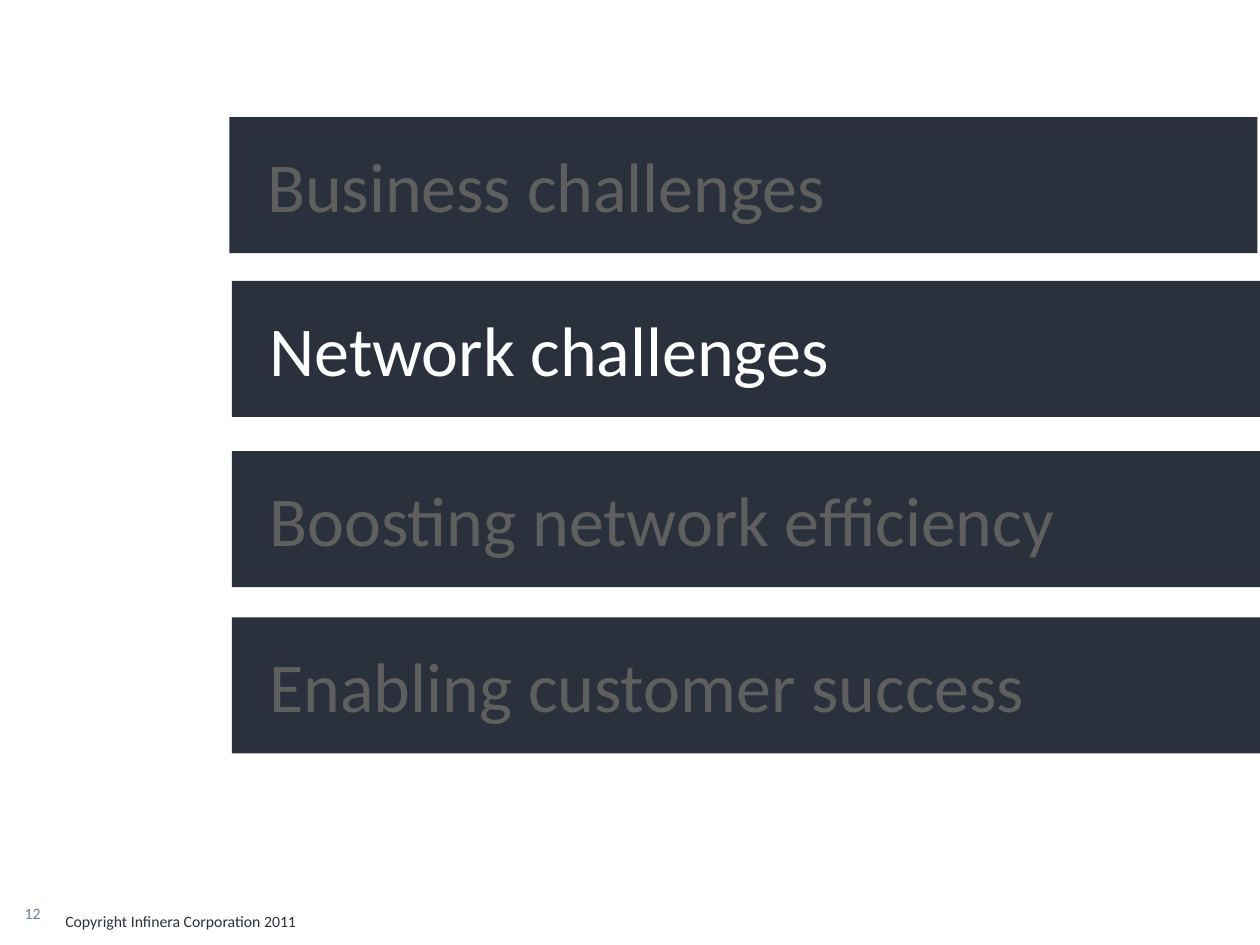
from pptx import Presentation
from pptx import util as u
from pptx.dml.color import RGBColor
from pptx.enum import shapes, text

NAVY = "2A313D"
GREY = "5F5F5F"
WHITE = "FFFFFF"
SLATE = "6E7F9B"


def rgb(value):
    return RGBColor.from_string(value)


class AgendaSlide:
    font = "Calibri"

    def __init__(self, prs):
        self.s = prs.slides.add_slide(prs.slide_layouts[6])

    def add_words(self, tf, words, size, color, align, anchor):
        tf.word_wrap = True
        tf.vertical_anchor = anchor
        p = tf.paragraphs[0]
        p.alignment = align
        r = p.add_run()
        r.text = words
        r.font.name = self.font
        r.font.size = u.Pt(size)
        r.font.color.rgb = rgb(color)

    def bar(self, words, left, top, color):
        sp = self.s.shapes.add_shape(
            shapes.MSO_SHAPE.RECTANGLE,
            u.Inches(left), u.Inches(top), u.Inches(8.16), u.Inches(1.08))
        sp.shadow.inherit = False
        sp.fill.solid()
        sp.fill.fore_color.rgb = rgb(NAVY)
        sp.line.fill.background()
        tf = sp.text_frame
        tf.margin_left, tf.margin_right = u.Inches(0.3), u.Inches(0.4)
        tf.margin_top = tf.margin_bottom = u.Inches(0.2)
        self.add_words(tf, words, 40, color, text.PP_ALIGN.LEFT, text.MSO_ANCHOR.TOP)
        tf.auto_size = text.MSO_AUTO_SIZE.SHAPE_TO_FIT_TEXT

    def label(self, words, left, top, width, height, color,
              align=text.PP_ALIGN.LEFT, anchor=text.MSO_ANCHOR.TOP):
        sp = self.s.shapes.add_textbox(
            u.Inches(left), u.Inches(top), u.Inches(width), u.Inches(height))
        self.add_words(sp.text_frame, words, 9, color, align, anchor)


def main():
    prs = Presentation()
    prs.slide_width, prs.slide_height = u.Inches(10), u.Inches(7.5)
    agenda = AgendaSlide(prs)

    for words, left, top, color in (
        ("Business challenges", 1.82, 0.93, GREY),
        ("Network challenges", 1.84, 2.23, WHITE),
        ("Boosting network efficiency", 1.84, 3.58, GREY),
        ("Enabling customer success", 1.84, 4.9, GREY),
    ):
        agenda.bar(words, left, top, color)

    agenda.label("12", 0, 7.12, 0.42, 0.25, SLATE,
                 text.PP_ALIGN.RIGHT, text.MSO_ANCHOR.MIDDLE)
    agenda.label("Copyright Infinera Corporation 2011", 0.42, 7.19, 4.57, 0.3, NAVY)
    prs.save("out.pptx")


if __name__ == "__main__":
    main()
